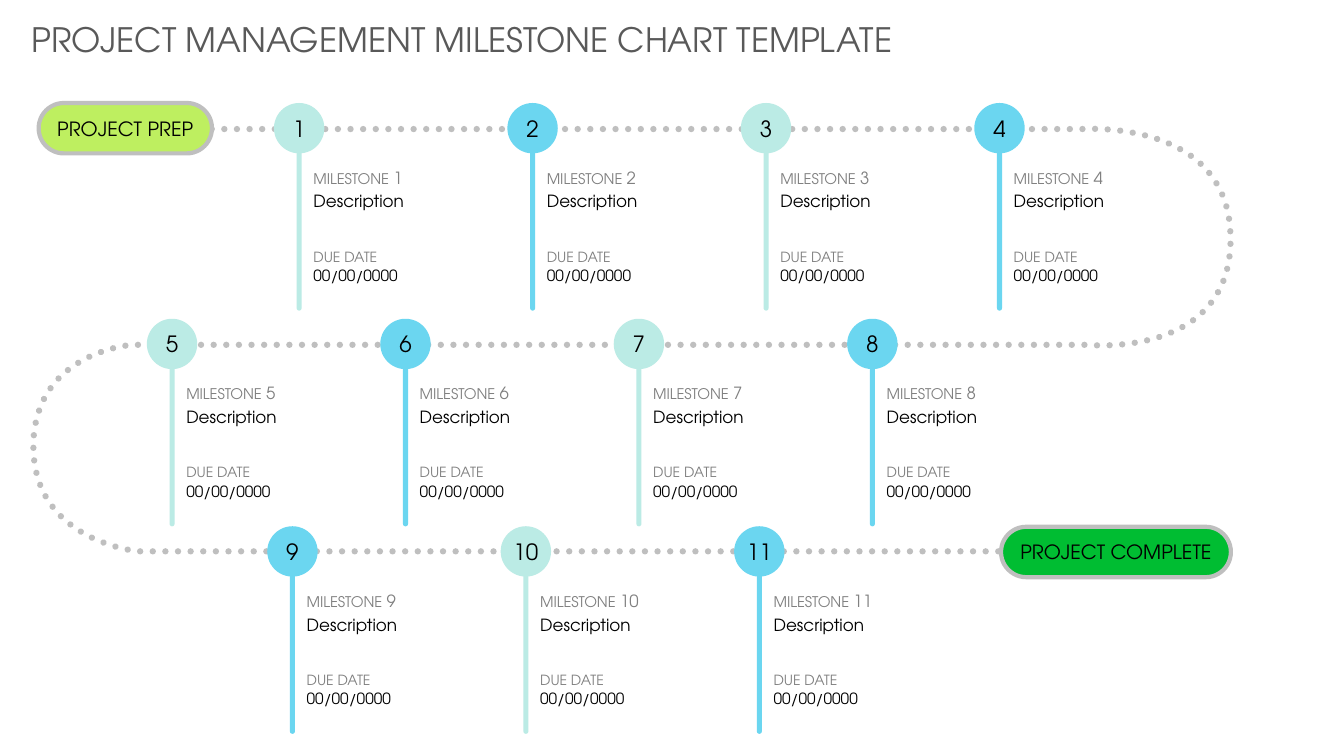
import dataclasses

import pptx
import pptx.dml.color
import pptx.enum.dml
import pptx.enum.shapes
import pptx.enum.text
import pptx.oxml.ns
import pptx.util

Pt = pptx.util.Pt
SHAPE = pptx.enum.shapes.MSO_SHAPE
ALIGN = pptx.enum.text.PP_ALIGN
ANCHOR = pptx.enum.text.MSO_ANCHOR


@dataclasses.dataclass(frozen=True)
class Theme:
    font: str = "TeX Gyre Adventor"
    head: str = "595959"
    ink: str = "000000"
    gray: str = "808080"
    trail: str = "BFBFBF"
    mint: str = "BBEBE5"
    sky: str = "6BD6F0"
    lime: str = "BEEF60"
    green: str = "00BD32"
    title: float = 24
    badge: float = 16
    pill: float = 14
    body: float = 12
    date: float = 11
    label: float = 10.5
    small: float = 10


THEME = Theme()
STEP = 166.75
DISC = 36


def color(code):
    return pptx.dml.color.RGBColor.from_string(code)


def write(par, runs):
    for text, size, code in runs:
        run = par.add_run()
        run.text = text
        run.font.name = THEME.font
        run.font.size = Pt(size)
        run.font.color.rgb = color(code)


def clear(frame):
    frame.margin_left = frame.margin_right = 0
    frame.margin_top = frame.margin_bottom = 0
    frame.word_wrap = True


def add_title(slide, text):
    title = slide.shapes.title
    title.left, title.top = Pt(15.1), Pt(10.1)
    title.width, title.height = Pt(641.5), Pt(36)
    frame = title.text_frame
    frame.auto_size = pptx.enum.text.MSO_AUTO_SIZE.NONE
    frame.word_wrap = False
    frame.vertical_anchor = ANCHOR.TOP
    par = frame.paragraphs[0]
    par.alignment = ALIGN.LEFT
    write(par, [(text, THEME.title, THEME.head)])


def add_form(shapes, kind, x, y, wide, high, fill, text="", size=0, edge=0):
    form = shapes.add_shape(kind, Pt(x), Pt(y), Pt(wide), Pt(high))
    form.shadow.inherit = False
    if kind == SHAPE.ROUNDED_RECTANGLE:
        form.adjustments[0] = 0.5
    form.fill.solid()
    form.fill.fore_color.rgb = color(fill)
    if edge:
        form.line.color.rgb = color(THEME.trail)
        form.line.width = Pt(edge)
    else:
        form.line.fill.background()
    if text:
        frame = form.text_frame
        clear(frame)
        frame.vertical_anchor = ANCHOR.MIDDLE
        par = frame.paragraphs[0]
        par.alignment = ALIGN.CENTER
        write(par, [(text, size, THEME.ink)])


def add_text(shapes, x, y, wide, high, runs, after=0):
    box = shapes.add_textbox(Pt(x), Pt(y), Pt(wide), Pt(high))
    clear(box.text_frame)
    par = box.text_frame.paragraphs[0]
    par.space_after = Pt(after)
    write(par, runs)


def add_stone(slide, number, x, y, fill):
    shapes = slide.shapes.add_group_shape().shapes
    left = x + 28.2
    add_form(shapes, SHAPE.ROUNDED_RECTANGLE, x + 16.2, y + 13.7, 3.6, 134.6, fill)
    add_text(shapes, left, y + 46, 84.2, 18.7, [
        ("MILESTONE", THEME.label, THEME.gray),
        (" ", THEME.date, THEME.gray),
        (str(number), THEME.body, THEME.gray),
    ])
    add_text(shapes, left, y + 63, 98.6, 41, [("Description", THEME.body, THEME.ink)])
    add_text(shapes, left, y + 103.7, 57.6, 14.4, [("DUE DATE", THEME.small, THEME.gray)], 3)
    add_text(shapes, left, y + 116.6, 64.8, 18.7, [("00/00/0000", THEME.date, THEME.ink)])
    add_form(shapes, SHAPE.OVAL, x, y, DISC, DISC, fill, str(number), THEME.badge)


def bend(start, pull, push, end, count=24):
    points = []
    for i in range(1, count + 1):
        t = i / count
        u = 1 - t
        points.append(tuple(
            u ** 3 * a + 3 * u * u * t * b + 3 * u * t * t * c + t ** 3 * d
            for a, b, c, d in zip(start, pull, push, end)
        ))
    return points


def add_trail(slide):
    top, mid, low = 92.2, 246.3, 393.8
    right, left = (879.1, 170.6), (23.8, 319)
    out, back = (772.6, top), (776.2, mid)
    turn, home = (94.3, mid), (98.6, low)
    points = [out]
    points += bend(out, out, (right[0], 84.2), right)
    points += bend(right, (right[0], 257), back, back)
    points += [turn]
    points += bend(turn, turn, (left[0], 251.3), left)
    points += bend(left, (left[0], 386.6), home, home)
    points += [(740.2, low)]
    build = slide.shapes.build_freeform(Pt(151.2), Pt(top))
    build.add_line_segments([(Pt(x), Pt(y)) for x, y in points], close=False)
    trail = build.convert_to_shape()
    trail.shadow.inherit = False
    trail.fill.background()
    trail.line.color.rgb = color(THEME.trail)
    trail.line.width = Pt(4.5)
    trail.line.dash_style = pptx.enum.dml.MSO_LINE.ROUND_DOT
    trail.element.spPr.find(pptx.oxml.ns.qn("a:ln")).set("cap", "rnd")


def main():
    deck = pptx.Presentation()
    deck.slide_width, deck.slide_height = Pt(960), Pt(540)
    slide = deck.slides.add_slide(deck.slide_layouts[5])
    add_title(slide, "PROJECT MANAGEMENT MILESTONE CHART TEMPLATE")
    add_trail(slide)
    add_form(slide.shapes, SHAPE.ROUNDED_RECTANGLE, 27.6, 73.6, 123.8, DISC,
             THEME.lime, "PROJECT PREP", THEME.pill, 3)
    tints = (THEME.mint, THEME.sky)
    rows = (
        (1, 4, 195.7, 73.6, 0),
        (5, 4, 104.9, 227.7, 0),
        (9, 3, 190.9, 375.9, 1),
    )
    for first, count, x, y, shift in rows:
        for i in range(count):
            add_stone(slide, first + i, x + i * STEP, y, tints[(i + shift) % 2])
    add_form(slide.shapes, SHAPE.ROUNDED_RECTANGLE, 715, 376.3, 164.2, DISC,
             THEME.green, "PROJECT COMPLETE", THEME.pill, 3)
    deck.save("out.pptx")


if __name__ == "__main__":
    main()
